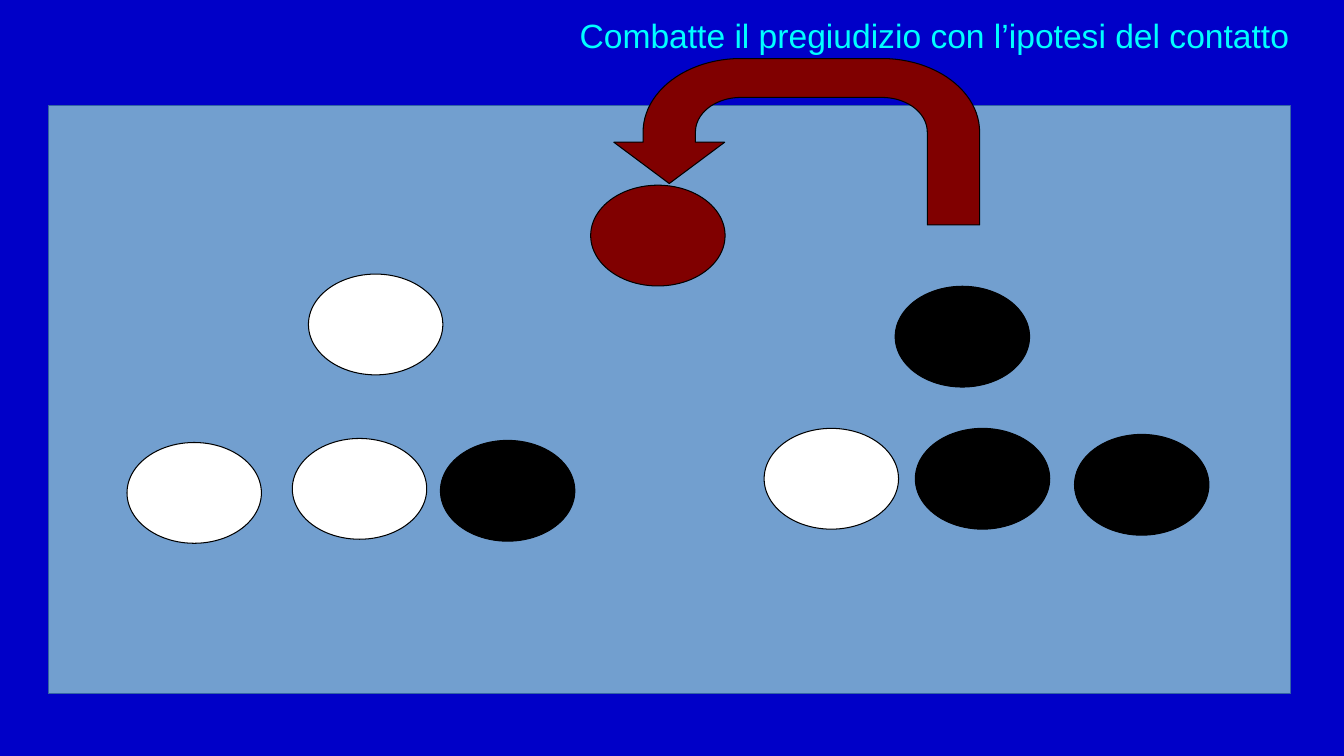
from math import cos, radians, sin

from pptx import Presentation
from pptx.dml.color import RGBColor
from pptx.enum.shapes import MSO_SHAPE
from pptx.enum.text import MSO_ANCHOR, PP_ALIGN
from pptx.util import Pt

RECT, OVAL = MSO_SHAPE.RECTANGLE, MSO_SHAPE.OVAL
MIDDLE, RIGHT = MSO_ANCHOR.MIDDLE, PP_ALIGN.RIGHT
WHITE, BLACK, RED = "FFFFFF", "000000", "800000"
DOT = (96, 72)
LEFT_DOTS = [(118.1, 117.4, WHITE), (0, 120.3, WHITE), (129.6, 0, WHITE), (223.9, 118.8, BLACK)]
RIGHT_DOTS = [(93.6, 0, BLACK), (108, 101.5, BLACK), (221.7, 105.8, BLACK), (0, 101.5, WHITE)]


def color(code):
    return RGBColor.from_string(code)


def paint(shape, fill, line=BLACK):
    shape.shadow.inherit = False
    shape.fill.solid()
    shape.fill.fore_color.rgb = color(fill)
    shape.line.color.rgb = color(line)
    shape.line.width = Pt(0.75)


def add_form(slide, kind, box, fill, line=BLACK):
    paint(slide.shapes.add_shape(kind, *map(Pt, box)), fill, line)


def add_title(slide, box, text):
    frame = slide.shapes.add_textbox(*map(Pt, box)).text_frame
    for name, value in {"word_wrap": True, "vertical_anchor": MIDDLE}.items():
        setattr(frame, name, value)
    par = frame.paragraphs[0]
    par.alignment = RIGHT
    run = par.add_run()
    run.text = text
    for name, value in {"name": "Arial", "size": Pt(24)}.items():
        setattr(run.font, name, value)
    run.font.color.rgb = color("00FFFF")


def add_group(slide, box, dots):
    left, top = box
    for x, y, fill in dots:
        add_form(slide, OVAL, (left + x, top + y, *DOT), fill)


def arc(x, y, wide, high, start, end, steps=24):
    angles = [radians(start + (end - start) * i / steps) for i in range(steps + 1)]
    return [(x + wide * cos(a), y - high * sin(a)) for a in angles]


def add_arrow(slide, box):
    left, top, width, height = box
    outer, inner = (69.8, 52.5), (32.4, 24.7)
    near, far, bend = 90.7, width - outer[0], outer[1]
    neck, tip, head = 59.8, 89.3, 79.2
    points = [
        (width, height),
        *arc(far, bend, *outer, 0, 90),
        *arc(near, bend, *outer, 90, 180),
        (near - outer[0], neck), (0, neck), (head / 2, tip), (head, neck),
        (near - inner[0], neck),
        *arc(near, bend, *inner, 180, 90),
        *arc(far, bend, *inner, 90, 0),
        (far + inner[0], height),
    ]
    spots = [(Pt(left + x), Pt(top + y)) for x, y in points]
    build = slide.shapes.build_freeform(*spots[0])
    build.add_line_segments(spots[1:], close=True)
    paint(build.convert_to_shape(), RED)


def main():
    deck = Presentation()
    deck.slide_width, deck.slide_height = Pt(960), Pt(540)
    slide = deck.slides.add_slide(deck.slide_layouts[6])
    back = slide.background.fill
    back.solid()
    back.fore_color.rgb = color("0000C8")
    add_title(slide, (127.4, 0, 800.6, 50.4), "Combatte il pregiudizio con l’ipotesi del contatto")
    add_form(slide, RECT, (34.6, 75.6, 887, 420), "729FCF", "3465A4")
    add_group(slide, (90.7, 195.8), LEFT_DOTS)
    add_group(slide, (545.8, 204.5), RIGHT_DOTS)
    add_arrow(slide, (438.5, 41.8, 261.3, 118.8))
    add_form(slide, OVAL, (421.9, 132.3, *DOT), RED)
    deck.save("out.pptx")


if __name__ == "__main__":
    main()
